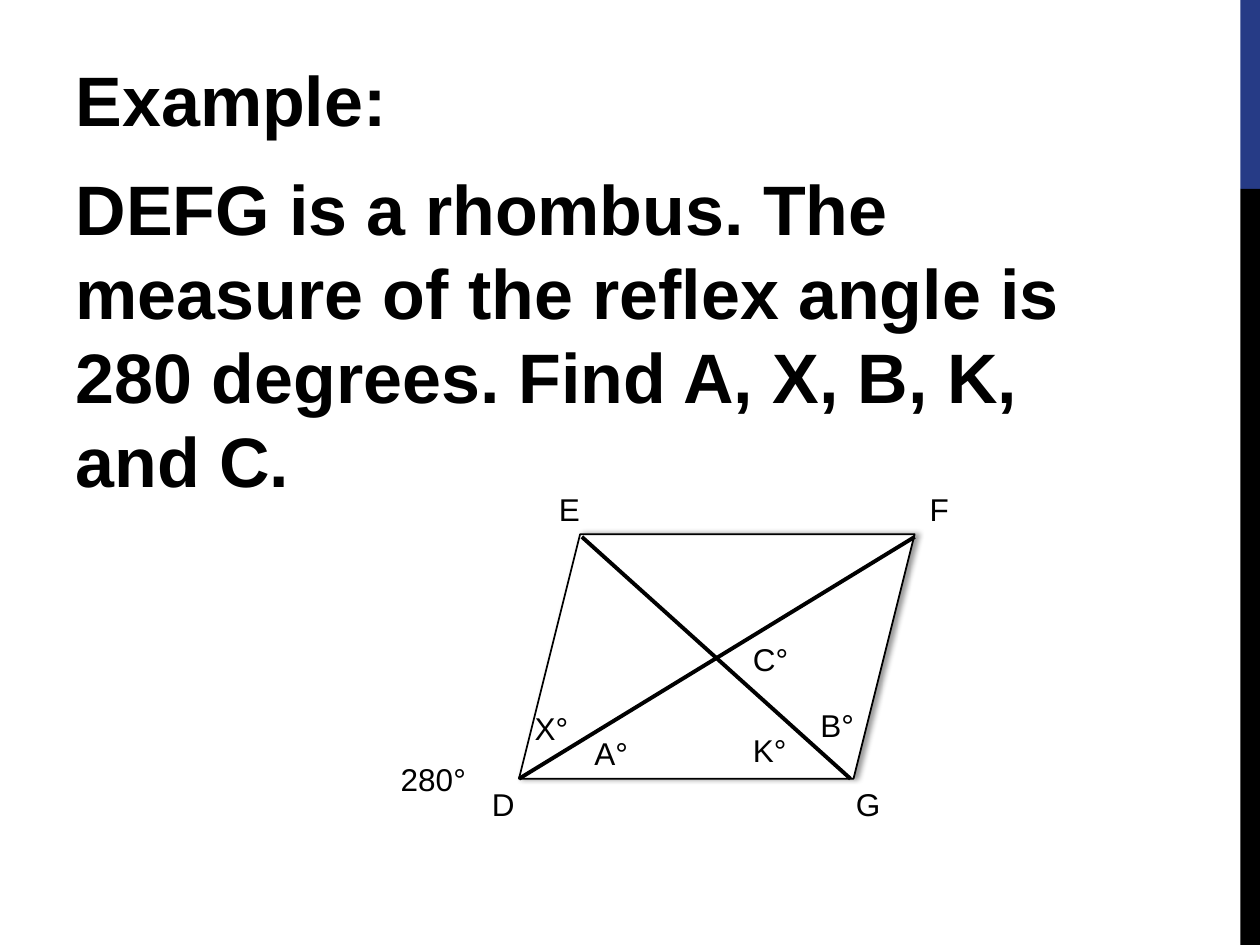
from lxml import etree
from pptx import Presentation, util as u
from pptx.dml.color import RGBColor
from pptx.enum import shapes as s, text as t
from pptx.oxml.ns import qn

THEME = {
    "font": "Arial", "ink": "000000", "paper": "FFFFFF", "accent": "263B86",
    "body_size": 40, "label_size": 18, "side": 1, "diagonal": 2.25,
}

PROBLEM = [
    "Example:",
    "DEFG is a rhombus. The measure of the reflex angle is 280 degrees. "
    "Find A, X, B, K, and C.",
]
PROBLEM_BOX = (36, 28.8, 600, 453.6)
BARS = [("accent", 0, 108), ("ink", 108, 432)]
BAR_LEFT, BAR_WIDTH = 708.75, 11.25

LEFT, TOP, WIDTH, HEIGHT = 296.6, 305.3, 226.1, 139.7
SLANT = HEIGHT / 4
RIGHT, BOTTOM = LEFT + WIDTH, TOP + HEIGHT
DIAGONALS = [
    ((LEFT + SLANT + 1, TOP + 1.5), (RIGHT - SLANT - 1.8, BOTTOM)),
    ((RIGHT, TOP + 1.5), (LEFT, BOTTOM)),
]
LABELS = [
    ("E", 312.3, 276.5, 26.4), ("F", 524.2, 276.5, 25.4),
    ("D", 274, 445, 27.4), ("G", 482, 445, 28.4),
    ("280°", 221.9, 430.6, 51.8), ("X°", 298.5, 401.8, 33.8),
    ("A°", 332.5, 415.8, 35.3), ("C°", 423.1, 362.2, 35.3),
    ("B°", 461.8, 399.9, 33.8), ("K°", 423.1, 414, 33.8),
]
LABEL_HEIGHT = 28.8


def color(name):
    return RGBColor.from_string(THEME[name])


def add_span(para, words, size, bold=False):
    span = para.add_run()
    span.text = words
    span.font.name = THEME["font"]
    span.font.size = u.Pt(THEME[size])
    span.font.bold = bold
    span.font.color.rgb = color("ink")


def add_filled(page, kind, place, fill):
    shape = page.shapes.add_shape(kind, *map(u.Pt, place))
    shape.shadow.inherit = False
    shape.fill.solid()
    shape.fill.fore_color.rgb = color(fill)
    shape.line.fill.background()
    return shape


def style_line(line, width):
    line.color.rgb = color("ink")
    line.width = u.Pt(THEME[width])


def add_problem(page):
    box = page.placeholders[1]
    box.left, box.top, box.width, box.height = map(u.Pt, PROBLEM_BOX)
    frame = box.text_frame
    frame.word_wrap = True
    frame.auto_size = t.MSO_AUTO_SIZE.NONE
    frame.vertical_anchor = t.MSO_ANCHOR.TOP
    for index, words in enumerate(PROBLEM):
        para = frame.add_paragraph() if index else frame.paragraphs[0]
        para.alignment = t.PP_ALIGN.LEFT
        para.line_spacing = 1.0
        para.space_before = u.Pt(THEME["body_size"] / 5)
        para.space_after = u.Pt(6)
        props = para._p.get_or_add_pPr()
        props.set("marL", "0")
        props.set("indent", "0")
        etree.SubElement(props, qn("a:buNone"))
        add_span(para, words, "body_size", True)


def add_rhombus(page):
    rhombus = add_filled(page, s.MSO_SHAPE.PARALLELOGRAM,
                         (LEFT, TOP, WIDTH, HEIGHT), "paper")
    style_line(rhombus.line, "side")
    effects = rhombus._element.spPr.find(qn("a:effectLst"))
    shadow = etree.SubElement(
        effects, qn("a:outerShdw"), blurRad=str(u.Pt(3.1)),
        dist=str(u.Pt(1.8)), dir="0", rotWithShape="0")
    shade = etree.SubElement(shadow, qn("a:srgbClr"), val=THEME["ink"])
    etree.SubElement(shade, qn("a:alpha"), val="40000")


def add_diagonal(page, start, end):
    diagonal = page.shapes.add_connector(
        s.MSO_CONNECTOR.STRAIGHT, *map(u.Pt, start + end))
    style_line(diagonal.line, "diagonal")
    etree.SubElement(diagonal._element.spPr, qn("a:effectLst"))


def add_label(page, words, left, top, width):
    box = page.shapes.add_textbox(*map(u.Pt, (left, top, width, LABEL_HEIGHT)))
    box.text_frame.word_wrap = False
    box.text_frame.auto_size = t.MSO_AUTO_SIZE.SHAPE_TO_FIT_TEXT
    add_span(box.text_frame.paragraphs[0], words, "label_size")


def main():
    deck = Presentation()
    deck.slide_width, deck.slide_height = u.Pt(720), u.Pt(540)
    page = deck.slides.add_slide(deck.slide_layouts[1])
    title = page.shapes.title._element
    title.getparent().remove(title)
    page.background.fill.solid()
    page.background.fill.fore_color.rgb = color("paper")
    for fill, top, height in BARS:
        add_filled(page, s.MSO_SHAPE.RECTANGLE,
                   (BAR_LEFT, top, BAR_WIDTH, height), fill)
    add_problem(page)
    add_rhombus(page)
    for start, end in DIAGONALS:
        add_diagonal(page, start, end)
    for label in LABELS:
        add_label(page, *label)
    deck.save("out.pptx")


if __name__ == "__main__":
    main()
